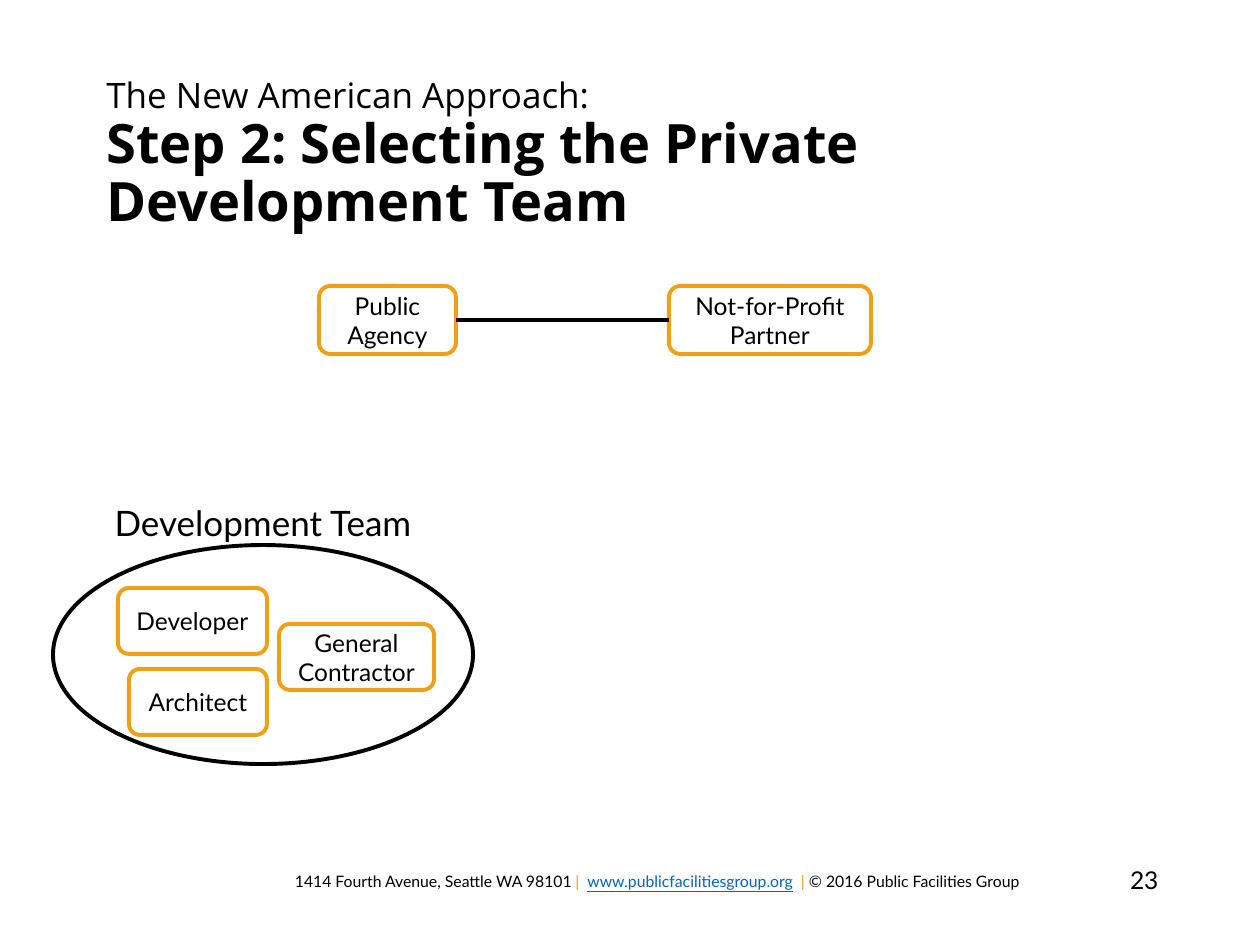
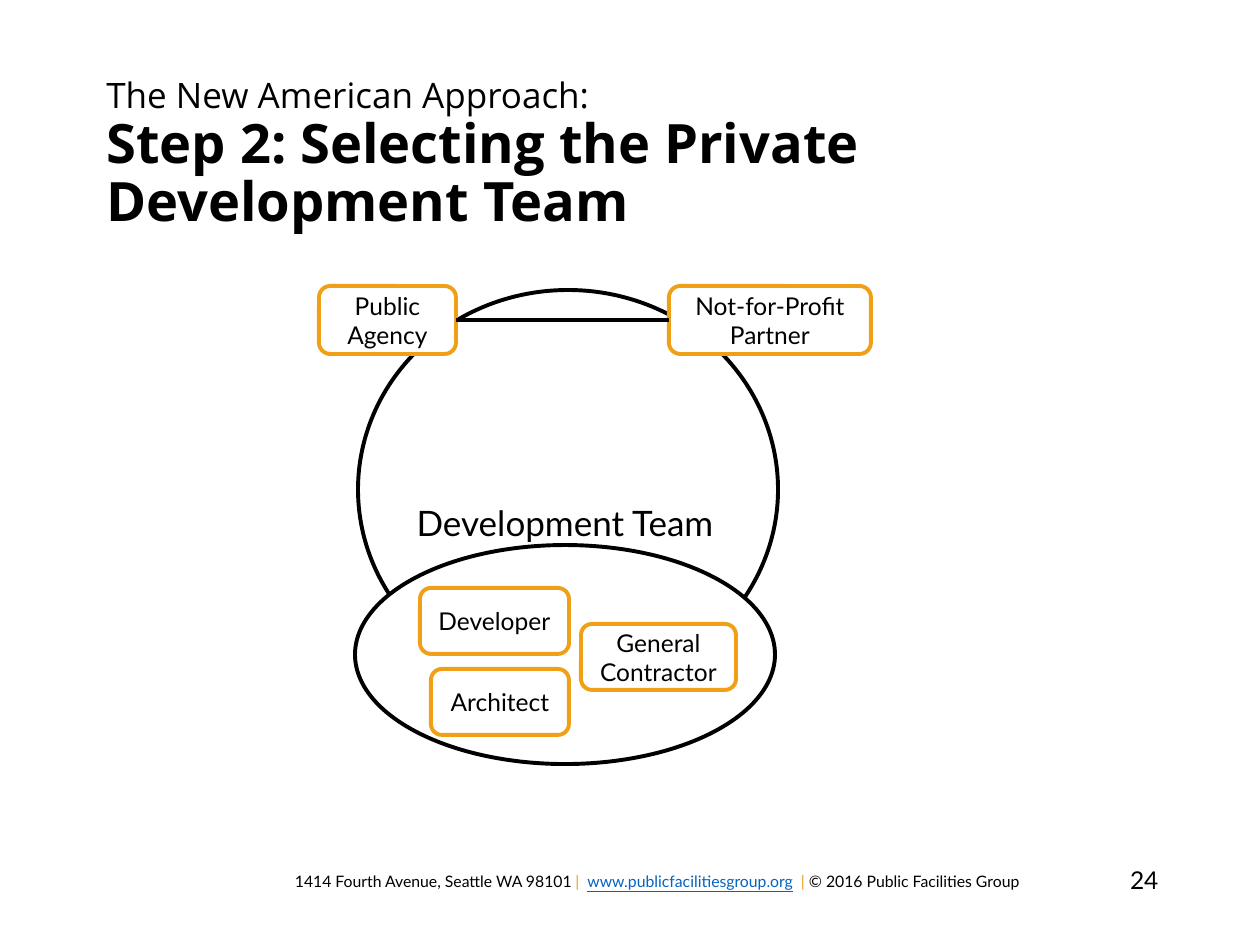
import pptx
import pptx.util
import pptx.dml.color
import pptx.enum.shapes
import pptx.enum.text
import pptx.oxml.ns
import lxml.etree

# Content
TITLE_LEAD = "The New American Approach: "
TITLE_MAIN = "Step 2: Selecting the Private Development Team"
BLACK, WHITE, ORANGE, LINK_BLUE = "000000", "FFFFFF", "EFA016", "0563C1"
FOOTER = [
    ("1414 Fourth Avenue, Seattle WA 98101", BLACK),
    (" |  ", ORANGE),
    ("www.publicfacilitiesgroup.org", LINK_BLUE),
    ("  ", BLACK),
    ("| ", ORANGE),
    ("© 2016 Public Facilities Group", BLACK),
]
SLIDES = [
    {"number": "23", "team_left": 53, "circle": False, "grouped": True},
    {"number": "24", "team_left": 355, "circle": True, "grouped": False},
]

# Places in px: left, top, width, height
PX_PER_INCH = 126
TITLE_AT = (94, 72, 1086, 168)
FOOTER_AT = (276, 866, 762, 50)
NUMBER_AT = (1042, 859, 129, 43)
AGENCY = ("Public Agency", (319, 286, 137, 68))
PARTNER = ("Not-for-Profit Partner", (669, 286, 202, 68))
CIRCLE_AT = (358, 290, 420, 399)

# The team's left positions are measured from the left of its oval
TEAM_LABEL = ("Development Team", (18, 495, 384, 55))
TEAM_OVAL_AT = (0, 545, 420, 219)
MEMBER_HEIGHT = 66
MEMBERS = [("Developer", 65, 588, 149), ("Architect", 76, 669, 138),
           ("General Contractor", 226, 624, 155)]

BODY_FONT, TITLE_FONT = "Lato", "Open Sans"
LINE_WIDTH = pptx.util.Pt(2.25)
SHAPE = pptx.enum.shapes.MSO_SHAPE
ALIGN = pptx.enum.text.PP_ALIGN
ANCHOR = pptx.enum.text.MSO_ANCHOR


def px(length):
    return round(length * pptx.util.Inches(1) / PX_PER_INCH)


def emu(place):
    return [px(length) for length in place]


def color(value):
    return pptx.dml.color.RGBColor.from_string(value)


def add_run(paragraph, text, size, ink=BLACK, font=BODY_FONT, bold=False):
    run = paragraph.add_run()
    run.text = text
    run.font.size = pptx.util.Pt(size)
    run.font.name = font
    run.font.bold = bold
    run.font.color.rgb = color(ink)
    return run


def add_text(shapes, place, align=ALIGN.LEFT, anchor=ANCHOR.TOP):
    frame = shapes.add_textbox(*emu(place)).text_frame
    frame.word_wrap = True
    frame.vertical_anchor = anchor
    frame.paragraphs[0].alignment = align
    return frame.paragraphs[0]


def add_outline(shapes, preset, place, edge):
    outline = shapes.add_shape(preset, *emu(place))
    outline.shadow.inherit = False
    outline.fill.solid()
    outline.fill.fore_color.rgb = color(WHITE)
    outline.line.color.rgb = color(edge)
    outline.line.width = LINE_WIDTH
    return outline


def add_role(shapes, name, place):
    role = add_outline(shapes, SHAPE.ROUNDED_RECTANGLE, place, ORANGE)
    role.text_frame.word_wrap = True
    role.text_frame.vertical_anchor = ANCHOR.MIDDLE
    paragraph = role.text_frame.paragraphs[0]
    paragraph.alignment = ALIGN.CENTER
    add_run(paragraph, name, 14)
    return role


def add_frame(shapes, number):
    # Footer, page number and title
    footer = add_text(shapes, FOOTER_AT, ALIGN.CENTER)
    for text, ink in FOOTER:
        add_run(footer, text, 9, ink).font.underline = ink == LINK_BLUE
    add_run(add_text(shapes, NUMBER_AT, ALIGN.RIGHT), number, 14)
    title = add_text(shapes, TITLE_AT, anchor=ANCHOR.MIDDLE)
    title.line_spacing = 0.9
    add_run(title, TITLE_LEAD, 20, font=TITLE_FONT)
    title.add_line_break()
    add_run(title, TITLE_MAIN, 31, font=TITLE_FONT, bold=True)


def add_partnership(shapes):
    agency = add_role(shapes, *AGENCY)
    partner = add_role(shapes, *PARTNER)
    bond = shapes.add_connector(pptx.enum.shapes.MSO_CONNECTOR.STRAIGHT, 0, 0, 0, 0)
    bond.begin_connect(agency, 3)
    bond.end_connect(partner, 1)
    bond.line.color.rgb = color(BLACK)
    bond.line.width = LINE_WIDTH
    lxml.etree.SubElement(bond._element.spPr, pptx.oxml.ns.qn("a:effectLst"))


def add_team(shapes, team_left):
    def placed(left, *rest):
        return (team_left + left, *rest)

    add_outline(shapes, SHAPE.OVAL, placed(*TEAM_OVAL_AT), BLACK)
    for name, left, top, width in MEMBERS:
        add_role(shapes, name, placed(left, top, width, MEMBER_HEIGHT))
    label, label_at = TEAM_LABEL
    add_run(add_text(shapes, placed(*label_at), ALIGN.CENTER), label, 20)


def main():
    deck = pptx.Presentation()
    deck.slide_width, deck.slide_height = pptx.util.Inches(10), pptx.util.Inches(7.5)
    for content in SLIDES:
        shapes = deck.slides.add_slide(deck.slide_layouts[6]).shapes
        if content["circle"]:
            add_outline(shapes, SHAPE.OVAL, CIRCLE_AT, BLACK)
        add_frame(shapes, content["number"])
        add_partnership(shapes)
        team = shapes.add_group_shape().shapes if content["grouped"] else shapes
        add_team(team, content["team_left"])
    deck.save("out.pptx")


if __name__ == "__main__":
    main()
